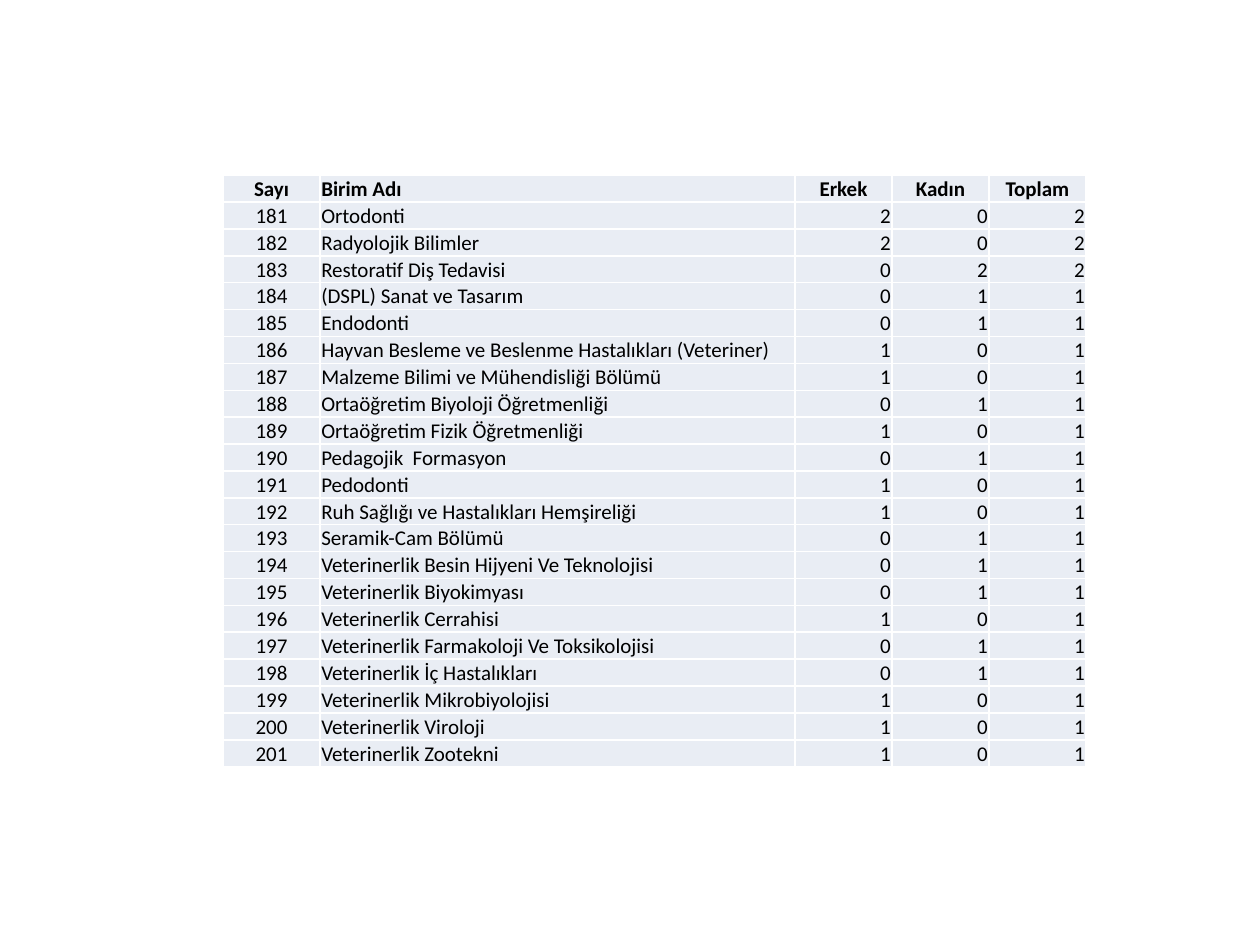
from dataclasses import dataclass
from lxml import etree
from pptx import Presentation
from pptx.dml.color import RGBColor
from pptx.enum.text import MSO_ANCHOR, PP_ALIGN
from pptx.oxml.ns import qn
from pptx.util import Inches, Pt

LEFT, MID, RIGHT = PP_ALIGN.LEFT, PP_ALIGN.CENTER, PP_ALIGN.RIGHT
CENTER = MSO_ANCHOR.MIDDLE


@dataclass(frozen=True)
class Theme:
    face: str = "Calibri"
    size: int = 12
    edge: int = 1
    ink: str = "000000"
    fill: str = "E9EDF4"
    line: str = "FFFFFF"


THEME = Theme()
CELL = {
    "margin_left": Inches(0.01),
    "margin_top": Inches(0.01),
    "margin_right": Inches(0.01),
    "margin_bottom": 0,
    "vertical_anchor": CENTER,
}
FONT = {"name": THEME.face, "size": Pt(THEME.size)}
PLAIN = {"first_row": False, "horz_banding": False}
WIDTHS = (0.77, 3.77, 0.77, 0.77, 0.77)
ROW_H = 0.18
FIRST = 181
HEAD = ("Sayı", "Birim Adı", "Erkek", "Kadın", "Toplam")
HEAD_AL = (MID, LEFT, MID, MID, MID)
BODY_AL = (MID, LEFT, RIGHT, RIGHT, RIGHT)
UNITS = (
    ("Ortodonti", 2, 0),
    ("Radyolojik Bilimler", 2, 0),
    ("Restoratif Diş Tedavisi", 0, 2),
    ("(DSPL) Sanat ve Tasarım", 0, 1),
    ("Endodonti", 0, 1),
    ("Hayvan Besleme ve Beslenme Hastalıkları (Veteriner)", 1, 0),
    ("Malzeme Bilimi ve Mühendisliği Bölümü", 1, 0),
    ("Ortaöğretim Biyoloji Öğretmenliği", 0, 1),
    ("Ortaöğretim Fizik Öğretmenliği", 1, 0),
    ("Pedagojik  Formasyon", 0, 1),
    ("Pedodonti", 1, 0),
    ("Ruh Sağlığı ve Hastalıkları Hemşireliği", 1, 0),
    ("Seramik-Cam Bölümü", 0, 1),
    ("Veterinerlik Besin Hijyeni Ve Teknolojisi", 0, 1),
    ("Veterinerlik Biyokimyası", 0, 1),
    ("Veterinerlik Cerrahisi", 1, 0),
    ("Veterinerlik Farmakoloji Ve Toksikolojisi", 0, 1),
    ("Veterinerlik İç Hastalıkları", 0, 1),
    ("Veterinerlik Mikrobiyolojisi", 1, 0),
    ("Veterinerlik Viroloji", 1, 0),
    ("Veterinerlik Zootekni", 1, 0),
)


def apply(item, form):
    for key, val in form.items():
        setattr(item, key, val)


def add_edges(cell):
    props = cell._tc.get_or_add_tcPr()
    for spot, side in enumerate(("lnL", "lnR", "lnT", "lnB")):
        line = etree.Element(qn(f"a:{side}"), w=str(Pt(THEME.edge)))
        fill = etree.SubElement(line, qn("a:solidFill"))
        etree.SubElement(fill, qn("a:srgbClr"), val=THEME.line)
        props.insert(spot, line)


def fill_cell(cell, text, align, bold):
    apply(cell, CELL)
    cell.fill.solid()
    cell.fill.fore_color.rgb = RGBColor.from_string(THEME.fill)
    add_edges(cell)
    para = cell.text_frame.paragraphs[0]
    para.alignment = align
    run = para.add_run()
    run.text = str(text)
    apply(run.font, {**FONT, "bold": bold})
    run.font.color.rgb = RGBColor.from_string(THEME.ink)


def add_grid(slide, rows):
    high = Inches(4.63)
    frame = slide.shapes.add_table(
        len(rows), len(WIDTHS), Inches(1.77), Inches(1.39), Inches(6.83), high
    )
    table = frame.table
    apply(table, PLAIN)
    for col, wide in zip(table.columns, WIDTHS):
        col.width = Inches(wide)
    for num, (row, texts) in enumerate(zip(table.rows, rows)):
        row.height = Inches(ROW_H)
        top = num == 0
        for cell, text, align in zip(row.cells, texts, HEAD_AL if top else BODY_AL):
            fill_cell(cell, text, align, top)
    frame.height = high


def main():
    deck = Presentation()
    apply(deck, {"slide_width": Inches(10), "slide_height": Inches(7.5)})
    slide = deck.slides.add_slide(deck.slide_layouts[6])
    rows = [HEAD]
    for num, (name, men, women) in enumerate(UNITS, FIRST):
        rows.append((num, name, men, women, men + women))
    add_grid(slide, rows)
    deck.save("out.pptx")


if __name__ == "__main__":
    main()
